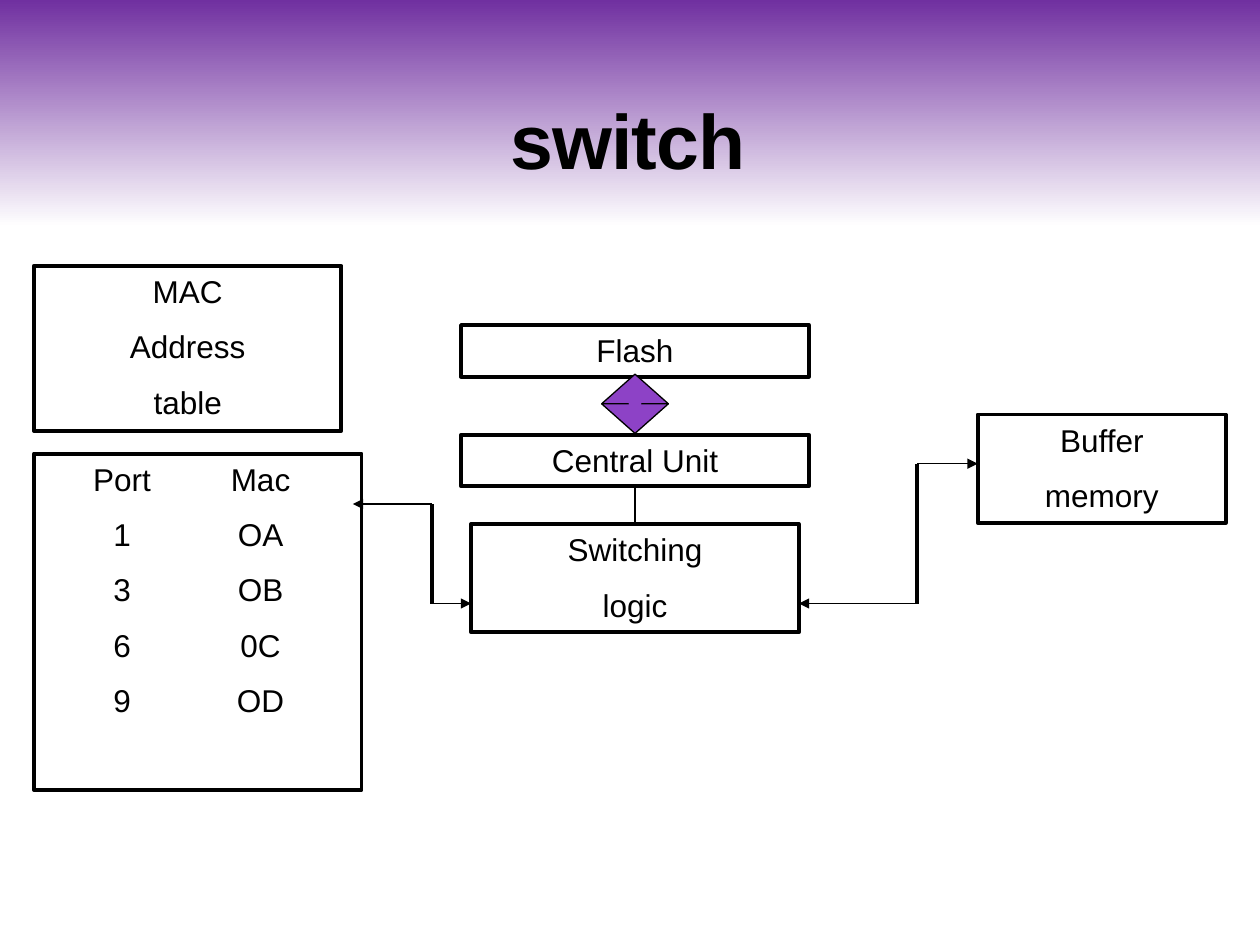
"""Build a slide showing the internal blocks of a network switch."""
import pptx
import pptx.dml.color
import pptx.enum.shapes
import pptx.enum.text
import pptx.oxml
import pptx.oxml.ns
import pptx.util

SHAPE = pptx.enum.shapes.MSO_SHAPE
ALIGN = pptx.enum.text.PP_ALIGN
ANCHOR = pptx.enum.text.MSO_ANCHOR
Pt = pptx.util.Pt

THEME = {
    "ink": "000000", "accent": "8D42C6",
    "background": [(0, "7030A0"), (0.24, "FFFFFF")],
    "title": {"name": "Arial", "size": Pt(44), "bold": True},
    "body": {"name": "Arial", "size": Pt(18), "bold": False},
    "thin": 0.75, "thick": 2.25, "gap": 10,
}

COLS, ROWS = 100, 75
AXIS = 50.4
LEFT = 2.7
LOGIC_W, UNIT_W = 26, 27.6
LOGIC_LEFT, LOGIC_RIGHT = AXIS - LOGIC_W / 2, AXIS + LOGIC_W / 2
LINK_ROW = 47.9

TITLE = ("switch", (0.7, 5.8, 98.3, 9.4))
BOXES = [
    (["Switching", "logic"], (LOGIC_LEFT, 41.6, LOGIC_W, 8.6)),
    (["Buffer", "memory"], (77.6, 32.9, 19.7, 8.6)),
    (["MAC", "Address", "table"], (LEFT, 21.1, 24.4, 13.1)),
    (["Central Unit"], (AXIS - UNIT_W / 2, 34.5, UNIT_W, 4.1)),
    (["Flash"], (AXIS - UNIT_W / 2, 25.8, UNIT_W, 4.1)),
]
MAC_TABLE = [("Port", "Mac"), ("1", "OA"), ("3", "OB"), ("6", "0C"), ("9", "OD")]
MAC_BOX = (LEFT, 36, 26, 26.7)
MAC_TABS = (6, 17)
ELBOWS = [
    ((28, 40), 34.3, (LOGIC_LEFT, LINK_ROW)),
    ((77.6, 36.8), 72.8, (LOGIC_RIGHT, LINK_ROW)),
]
BUS = (AXIS - 2.65, 29.7, 5.3, 4.7)
STEM = ((AXIS, 38.6), (AXIS, 41.7))

prs = pptx.Presentation()
prs.slide_width, prs.slide_height = pptx.util.Inches(10), pptx.util.Inches(7.5)
s = prs.slides.add_slide(prs.slide_layouts[6])


def rgb(value):
    return pptx.dml.color.RGBColor.from_string(value)


def place(*cells):
    units = (prs.slide_width / COLS, prs.slide_height / ROWS)
    return [round(c * units[i % 2]) for i, c in enumerate(cells)]


def assign(obj, values):
    for name, value in values.items():
        setattr(obj, name, value)


def write(tf, lines, font, align, tabs=()):
    for i, line in enumerate(lines):
        p = tf.paragraphs[0] if i == 0 else tf.add_paragraph()
        assign(p, {"alignment": align, "space_before": Pt(THEME["gap"] if i else 0)})
        if tabs:
            stops = pptx.oxml.ns.qn("a:tabLst")
            tab_list = p._p.get_or_add_pPr().makeelement(stops, {})
            p._p.pPr.append(tab_list)
            for tab in tabs:
                tab_list.append(tab_list.makeelement(
                    pptx.oxml.ns.qn("a:tab"), {"pos": str(place(tab)[0]), "algn": "ctr"}))
        r = p.add_run()
        r.text = line
        assign(r.font, THEME[font])
        r.font.color.rgb = rgb(THEME["ink"])


def add_shape(kind, cells, weight, fill=None):
    sp = s.shapes.add_shape(kind, *place(*cells))
    sp.shadow.inherit = False
    if fill:
        sp.fill.solid()
        sp.fill.fore_color.rgb = rgb(fill)
    else:
        sp.fill.background()
    sp.line.color.rgb = rgb(THEME["ink"])
    sp.line.width = Pt(weight)
    return sp


def add_box(lines, cells, align=ALIGN.CENTER, tabs=()):
    tf = add_shape(SHAPE.RECTANGLE, cells, THEME["thick"]).text_frame
    assign(tf, {"word_wrap": True, "vertical_anchor": ANCHOR.TOP})
    write(tf, lines, "body", align, tabs)


def add_line(start, end, weight, arrow=False):
    straight = pptx.enum.shapes.MSO_CONNECTOR.STRAIGHT
    sp = s.shapes.add_connector(straight, *place(*start, *end))
    sp.line.color.rgb = rgb(THEME["ink"])
    sp.line.width = Pt(weight)
    props = sp._element.spPr
    props.append(props.makeelement(pptx.oxml.ns.qn("a:effectLst"), {}))
    if arrow:
        ln = sp.line._get_or_add_ln()
        ln.append(ln.makeelement(pptx.oxml.ns.qn("a:tailEnd"), {"type": "triangle"}))


fill = s.background.fill
fill.gradient()
fill.gradient_angle = 270
for stop, (position, colour) in zip(fill.gradient_stops, THEME["background"]):
    stop.position = position
    stop.color.rgb = rgb(colour)

text, cells = TITLE
tf = s.shapes.add_textbox(*place(*cells)).text_frame
assign(tf, {"word_wrap": True, "vertical_anchor": ANCHOR.BOTTOM})
write(tf, [text], "title", ALIGN.CENTER)
tf.paragraphs[0].line_spacing = 0.85
tf.paragraphs[0].runs[0].font._element.set("spc", "-50")

for lines, cells in BOXES:
    add_box(lines, cells)
add_box([f"\t{port}\t{mac}" for port, mac in MAC_TABLE], MAC_BOX, ALIGN.LEFT, MAC_TABS)

for start, bend, end in ELBOWS:
    corners = [(bend, start[1]), (bend, end[1])]
    add_line(*corners, THEME["thick"])
    for corner, tip in zip(corners, (start, end)):
        add_line(corner, tip, THEME["thin"], arrow=True)

bus = add_shape(SHAPE.UP_DOWN_ARROW, BUS, THEME["thin"], THEME["accent"])
bus.adjustments[0], bus.adjustments[1] = 0.5, 0.2
add_line(*STEM, THEME["thin"])

prs.save("out.pptx")
